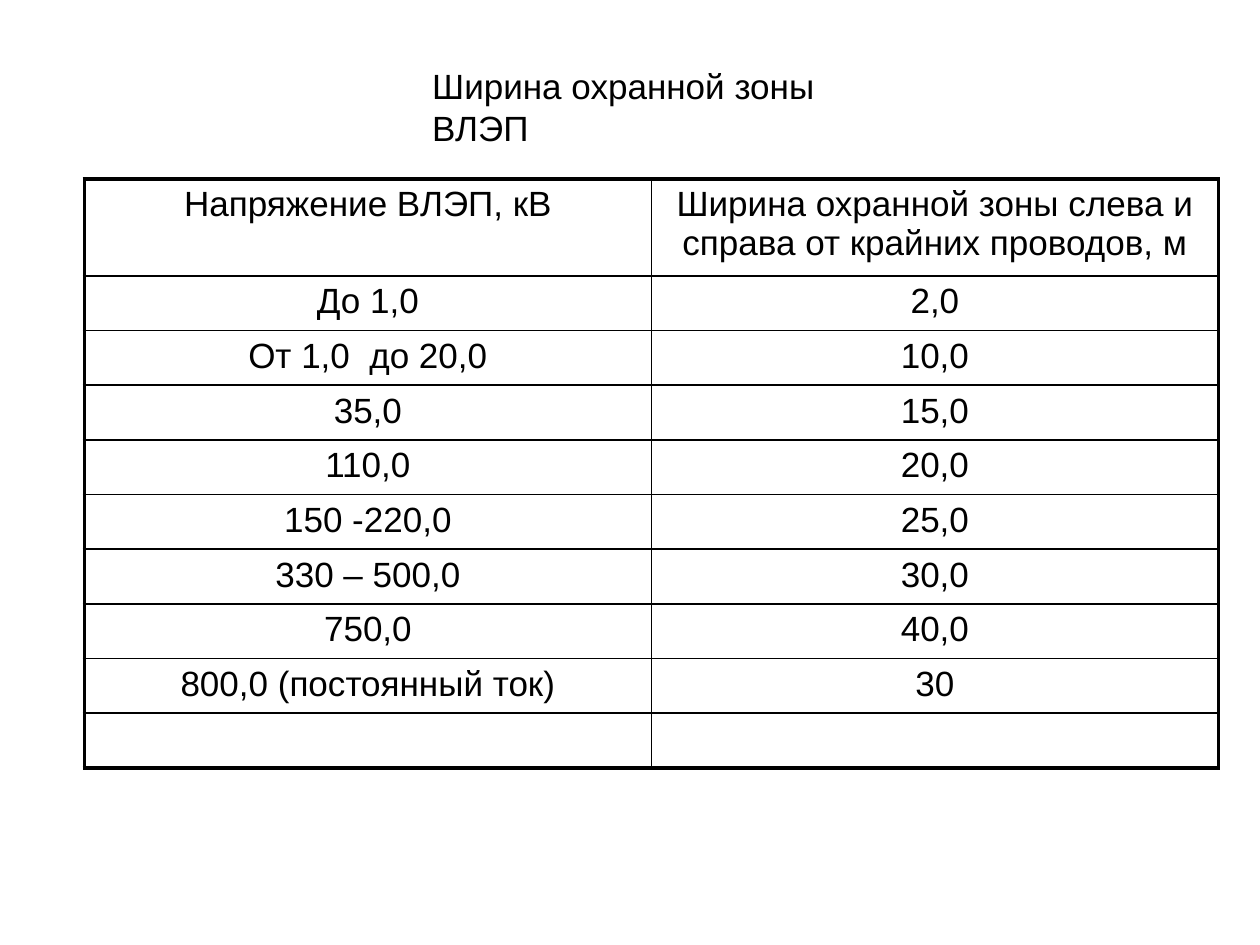
from pptx import Presentation
from pptx.dml.color import RGBColor
from pptx.enum.text import MSO_ANCHOR, MSO_AUTO_SIZE, PP_ALIGN
from pptx.oxml.ns import qn
from pptx.util import Inches, Pt
from lxml.etree import SubElement

BLACK = RGBColor(0x00, 0x00, 0x00)
THIN = Pt(1)
THICK = Pt(2.25)

TITLE = "Ширина охранной зоны ВЛЭП"
ZONES = [
    ("Напряжение ВЛЭП, кВ", "Ширина охранной зоны слева и справа от крайних проводов, м"),
    ("До 1,0", "2,0"),
    ("От 1,0  до 20,0", "10,0"),
    ("35,0", "15,0"),
    ("110,0", "20,0"),
    ("150 -220,0", "25,0"),
    ("330 – 500,0", "30,0"),
    ("750,0", "40,0"),
    ("800,0 (постоянный ток)", "30"),
    ("", ""),
]


class SlideBuilder:
    def __init__(self, page, font="Arial", size=20, color=BLACK):
        self.page = page
        self.font = font
        self.size = Pt(size)
        self.color = color

    def style(self, font):
        font.name = self.font
        font.size = self.size
        font.color.rgb = self.color
        font.bold = False

    def add_text(self, para, text, alignment):
        para.alignment = alignment
        if text:
            span = para.add_run()
            span.text = text
            self.style(span.font)
        else:
            self.style(para.font)

    def title(self, text, left, top, width, height):
        box = self.page.shapes.title
        box.left, box.top = Inches(left), Inches(top)
        box.width, box.height = Inches(width), Inches(height)
        frame = box.text_frame
        frame.word_wrap = False
        frame.auto_size = MSO_AUTO_SIZE.SHAPE_TO_FIT_TEXT
        frame.vertical_anchor = MSO_ANCHOR.TOP
        self.add_text(frame.paragraphs[0], text, PP_ALIGN.LEFT)

    def border(self, cell, side, width):
        properties = cell._tc.get_or_add_tcPr()
        line = SubElement(properties, qn(f"a:ln{side}"), w=str(width))
        fill = SubElement(line, qn("a:solidFill"))
        SubElement(fill, qn("a:srgbClr"), val=str(self.color))

    def table(self, rows, left, top, width, header_height, row_height):
        row_count, column_count = len(rows), len(rows[0])
        height = header_height + row_height * (row_count - 1)
        table = self.page.shapes.add_table(
            row_count, column_count, Inches(left), Inches(top), Inches(width), Inches(height)
        ).table
        table.first_row = False
        table.horz_banding = False
        for row_index, texts in enumerate(rows):
            table.rows[row_index].height = Inches(row_height if row_index else header_height)
            for column_index, text in enumerate(texts):
                cell = table.cell(row_index, column_index)
                outer_sides = {
                    "L": column_index == 0,
                    "R": column_index == column_count - 1,
                    "T": row_index == 0,
                    "B": row_index == row_count - 1,
                }
                for side, outer in outer_sides.items():
                    self.border(cell, side, THICK if outer else THIN)
                cell.fill.background()
                self.add_text(cell.text_frame.paragraphs[0], text, PP_ALIGN.CENTER)


def main():
    deck = Presentation()
    deck.slide_width, deck.slide_height = Inches(10), Inches(7.5)
    page = deck.slides.add_slide(deck.slide_layouts[5])
    builder = SlideBuilder(page)
    builder.title(TITLE, 3.33, 0.46, 4.07, 0.43)
    builder.table(ZONES, 0.67, 1.42, 9, header_height=0.77, row_height=0.43)
    deck.save("out.pptx")


if __name__ == "__main__":
    main()
